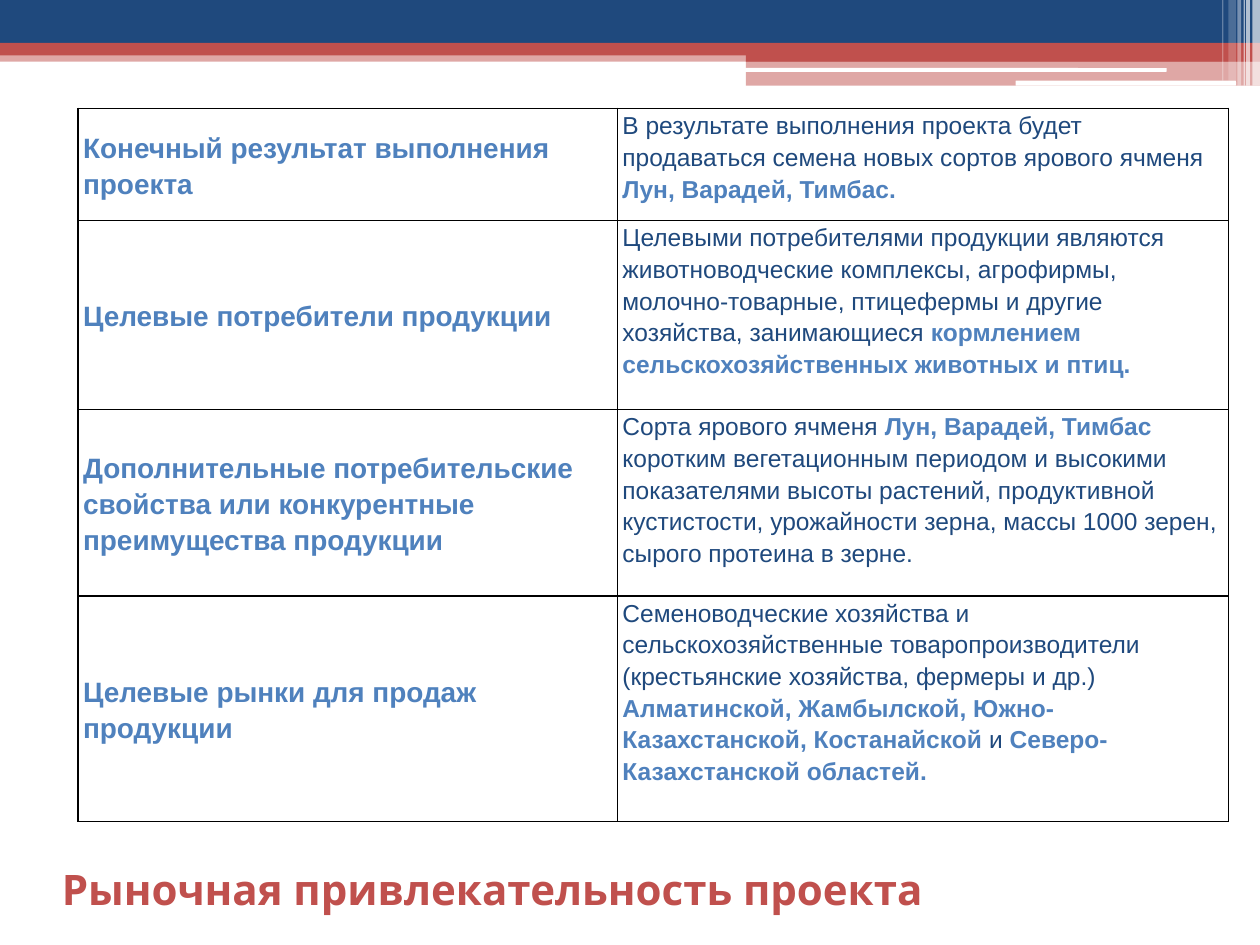
"""Build the slide on the market appeal of the project."""
import pptx
import pptx.dml.color
import pptx.enum.shapes
import pptx.enum.text
import pptx.oxml
import pptx.oxml.ns
import pptx.util

Inches = pptx.util.Inches
RGBColor = pptx.dml.color.RGBColor
NAVY = RGBColor(0x1F, 0x49, 0x7D)
BLUE = RGBColor(0x4F, 0x81, 0xBD)
RED = RGBColor(0xC0, 0x50, 0x4D)
WHITE = RGBColor(0xFF, 0xFF, 0xFF)
RECT = pptx.enum.shapes.MSO_SHAPE.RECTANGLE
ROUND = pptx.enum.shapes.MSO_SHAPE.ROUNDED_RECTANGLE
MIDDLE = pptx.enum.text.MSO_ANCHOR.MIDDLE
TOP = pptx.enum.text.MSO_ANCHOR.TOP
LEFT = pptx.enum.text.PP_ALIGN.LEFT


def write(para, text, size=14, color=NAVY, bold=False, font="Arial"):
    run = para.add_run()
    run.text = text
    run.font.size = pptx.util.Pt(size)
    run.font.name = font
    run.font.bold = bold
    run.font.color.rgb = color


deck = pptx.Presentation()
deck.slide_width = Inches(10)
deck.slide_height = Inches(7.5)
slide = deck.slides.add_slide(deck.slide_layouts[5])

bands = [
    (RECT, 0, 0.4, 10, 0.09, RED, 50),
    (RECT, 0, 0, 10, 0.34, NAVY, 100),
    (RECT, 0, 0.34, 10, 0.1, RED, 100),
    (RECT, 5.92, 0.39, 4.08, 0.1, RED, 100),
    (RECT, 5.92, 0.48, 4.08, 0.2, RED, 50),
    (ROUND, 5.91, 0.54, 3.35, 0.03, WHITE, 100),
    (ROUND, 8.06, 0.64, 1.75, 0.04, WHITE, 100),
    (RECT, 9.94, 0, 0.06, 0.68, WHITE, 65),
    (RECT, 9.89, 0, 0.03, 0.68, WHITE, 65),
    (RECT, 9.87, 0, 0.01, 0.68, WHITE, 60),
    (RECT, 9.82, 0, 0.03, 0.68, WHITE, 40),
    (RECT, 9.75, 0, 0.06, 0.64, WHITE, 20),
    (RECT, 9.7, 0, 0.01, 0.64, WHITE, 30),
]
for kind, left, top, width, height, color, alpha in bands:
    band = slide.shapes.add_shape(
        kind, Inches(left), Inches(top), Inches(width), Inches(height))
    band.shadow.inherit = False
    band.line.fill.background()
    band.fill.solid()
    band.fill.fore_color.rgb = color
    if alpha < 100:
        tint = band.fill._xPr.find(".//" + pptx.oxml.ns.qn("a:srgbClr"))
        tint.append(pptx.oxml.parse_xml(
            f'<a:alpha {pptx.oxml.ns.nsdecls("a")} val="{alpha * 1000}"/>'))

sorts = "Лун, Варадей, Тимбас"
rows = [
    (0.89, "Конечный результат выполнения проекта", [
        ("В результате выполнения проекта будет продаваться семена новых "
         "сортов ярового ячменя ", False),
        (sorts + ".", True)]),
    (1.5, "Целевые потребители продукции", [
        ("Целевыми потребителями продукции являются животноводческие "
         "комплексы, агрофирмы, молочно-товарные, птицефермы и другие "
         "хозяйства, занимающиеся ", False),
        ("кормлением сельскохозяйственных животных и птиц.", True)]),
    (1.48, "Дополнительные потребительские свойства или конкурентные "
     "преимущества продукции", [
        ("Сорта ярового ячменя ", False),
        (sorts + " ", True),
        ("коротким вегетационным периодом и высокими показателями высоты "
         "растений, продуктивной кустистости, урожайности зерна, массы "
         "1000 зерен, сырого протеина в зерне.", False)]),
    (1.79, "Целевые рынки для продаж продукции", [
        ("Семеноводческие хозяйства и сельскохозяйственные "
         "товаропроизводители (крестьянские хозяйства, фермеры и др.) ", False),
        ("Алматинской, Жамбылской, Южно-Казахстанской, Костанайской", True),
        (" и ", False),
        ("Северо-Казахстанской областей.", True)]),
]
table = slide.shapes.add_table(
    len(rows), 2, Inches(0.62), Inches(0.86), Inches(9.13), Inches(5.66)).table
table.first_row = False
table.horz_banding = False
table.columns[0].width = Inches(4.28)
table.columns[1].width = Inches(4.85)
for row, (height, head, parts) in zip(table.rows, rows):
    row.height = Inches(height)
    for cell in row.cells:
        cell.margin_left = cell.margin_right = Inches(0.04)
        cell.margin_top = cell.margin_bottom = 0
        for side in "LRTB":
            cell._tc.get_or_add_tcPr().append(pptx.oxml.parse_xml(
                f'<a:ln{side} {pptx.oxml.ns.nsdecls("a")} w="12700"><a:solidFill>'
                f'<a:srgbClr val="000000"/></a:solidFill></a:ln{side}>'))
        cell.fill.background()
        cell.text_frame.paragraphs[0].line_spacing = 1.15
    name, body = row.cells
    name.vertical_anchor = MIDDLE
    write(name.text_frame.paragraphs[0], head, size=16, color=BLUE, bold=True)
    for text, strong in parts:
        write(body.text_frame.paragraphs[0], text,
              color=BLUE if strong else NAVY, bold=strong)

title = slide.shapes.title
title.left, title.top = Inches(0.39), Inches(6.8)
title.width, title.height = Inches(9.21), Inches(0.5)
title.text_frame.word_wrap = True
title.text_frame.auto_size = pptx.enum.text.MSO_AUTO_SIZE.NONE
title.text_frame.vertical_anchor = TOP
line = title.text_frame.paragraphs[0]
line.alignment = LEFT
write(line, "Рыночная привлекательность проекта",
      size=24, color=RED, bold=True, font="Karla")

deck.save("out.pptx")
